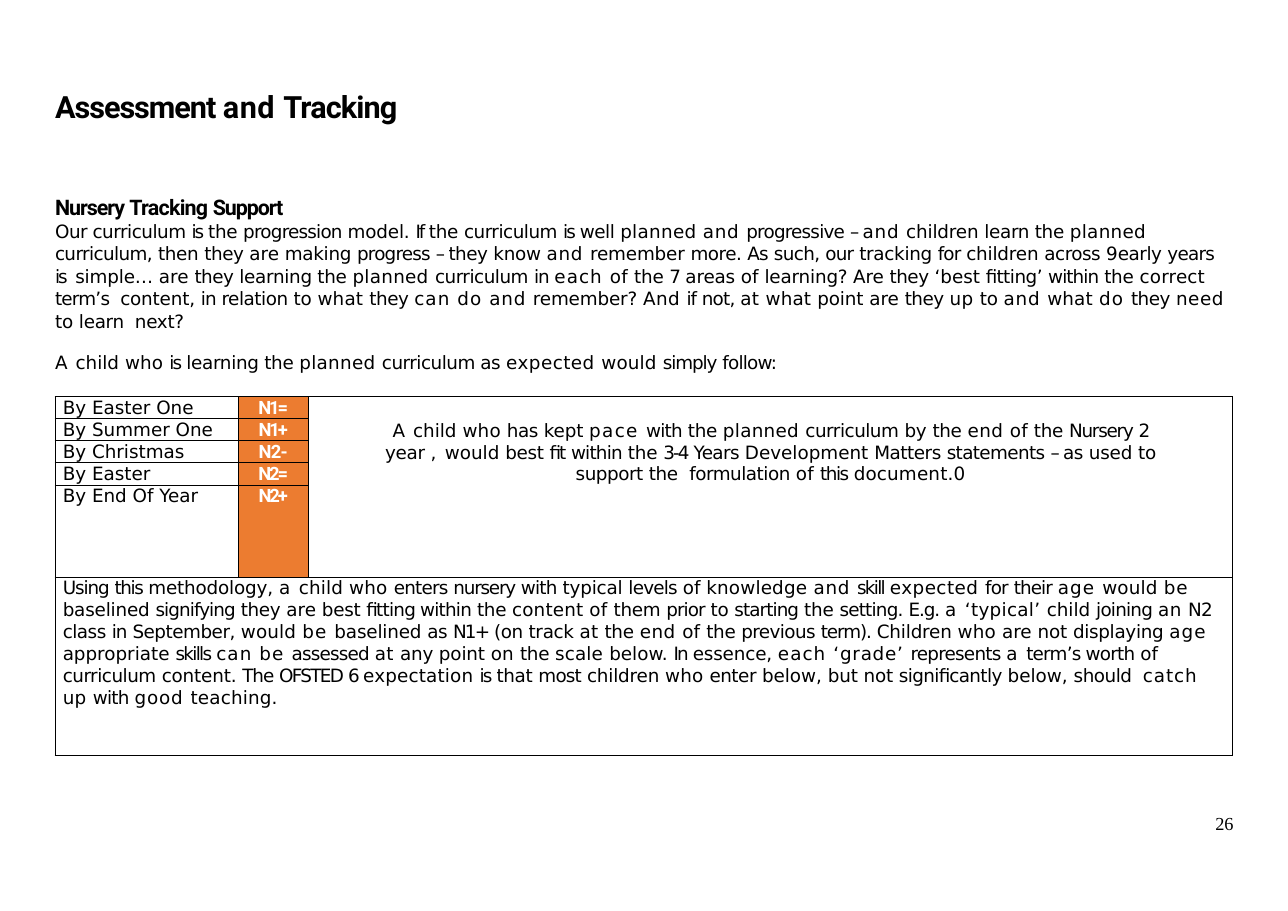
import pptx
import pptx.dml.color
import pptx.enum.text
import pptx.util
from lxml import etree
from pptx.oxml.ns import qn

WIDTH, HEIGHT = 11.69, 8.27
LEFT = 0.5
BLACK, WHITE, ORANGE = "000000", "FFFFFF", "EC7C30"
HEADING_FONT, BODY_FONT, NUMBER_FONT = "Roboto", "DejaVu Sans", "Times New Roman"
PP_ALIGN = pptx.enum.text.PP_ALIGN
Inches, Pt = pptx.util.Inches, pptx.util.Pt

# A number in brackets is the letter spacing, in points, of the words after it.
# Long paragraphs are tuples of pieces that are joined when written.
TITLE = "[-.7]Assessment [.3]and [-.6]Tracking"
SUBHEADING = "[-.7]Nursery [-.5]Tracking [-.7]Support"
INTRO = (
    "[-.3]Our curriculum [-1.3]is [-.2]the [-.5]progression [-.1]model. [-1.4]If [-.2]the ",
    "[-.3]curriculum [-1.2]is [-.3]well [.2]planned [.5]and [-.5]progressive [-1.6]– [.5]and ",
    "[-.1]children [-.2]learn the [.2]planned  ",
    "[-.4]curriculum, [-.2]then [-.3]they [0]are [-.2]making [-.5]progress [-1.6]– [-.3]they ",
    "[-.2]know [.5]and [-.1]remember [-.3]more. [-.5]As [-.4]such, [-.5]our [-.2]tracking ",
    "[-.6]for [-.1]children [-.3]across [-1.2]9[-.3]early [-.5]years ",
    "[-1.3]is  [-.1]simple… [0]are [-.3]they [-.2]learning the [.2]planned [-.3]curriculum ",
    "[-.7]in [.7]each [.1]of [-.1]the [-1]7 [-.1]areas [0]of [-.1]learning? Are [-.3]they ",
    "[0]‘best [-.3]fitting’ [-.6]within [-.1]the [.1]correct ",
    "[-.5]term’s  [-.1]content, [-.6]in [-.3]relation [-.1]to [.1]what [-.3]they [.7]can do ",
    "[.5]and [-.1]remember? [.3]And [-.7]if [-.5]not, [.2]at [.1]what [-.1]point [0]are ",
    "[-.3]they [.2]up [-.1]to [.5]and [.1]what [.7]do [-.3]they [.4]need ",
    "[-.1]to [-.2]learn  next?",
)
LEAD_IN = (
    "[.7]A [0]child [.1]who [-1.2]is [-.2]learning the [.2]planned [-.3]curriculum as ",
    "[.3]expected [.1]would [-.7]simply [-.5]follow:",
)
STAGES = [
    ("By Easter One", "[-1.4]N1="),
    ("By Summer One", "[-1.4]N1+"),
    ("By Christmas", "[-.5]N2-"),
    ("By Easter", "[-1.4]N2="),
    ("By End Of Year", "[-1.4]N2+"),
]
OUTCOME = (
    "[.7]A [0]child [.1]who [-.3]has [-.1]kept [.9]pace [-.5]with [-.2]the [.2]planned ",
    "[-.3]curriculum [-.1]by [-.2]the [.3]end [.1]of [-.2]the [-.8]Nursery [-1]2 ",
    "[-.2]year [-1.1],  [0]would [-.2]best [-.7]fit [-.5]within [-.1]the [-1.2]3-4 ",
    "[-.4]Years [0]Development [-.3]Matters [-.4]statements [-1.6]– [-.3]as [-.1]used to ",
    "[-.3]support [-.2]the  [-.3]formulation [.1]of [-.9]this [.1]document.0",
)
METHOD = (
    "[-.7]Using [-.9]this [-.1]methodology, [.9]a [.1]child who [-.5]enters [-.8]nursery ",
    "[-.5]with [-.1]typical [-.5]levels [0]of [.1]knowledge [.5]and [-1.1]skill [.3]expected ",
    "[-.5]for [-.6]their [.7]age [.1]would [.6]be  ",
    "[-.1]baselined [-.6]signifying [-.2]they [0]are [-.2]best [-.5]fitting within [-.2]the ",
    "[.1]content of [-.2]them [-.6]prior [-.2]to [-.6]starting [-.1]the [-.5]setting. ",
    "[-.7]E.g. [.9]a [.2]‘typical’ [0]child [-.5]joining [.3]an [-.6]N2  ",
    "[-.3]class [-.6]in [-.3]September, [.1]would [.7]be [-.1]baselined [-.3]as [-1.2]N1+ ",
    "[-.3](on [-.2]track [.1]at [-.1]the [.3]end [.1]of [-.2]the [-.4]previous [-.7]term). ",
    "[-.1]Children [.1]who [0]are [-.1]not [-.2]displaying [.7]age  ",
    "[0]appropriate [-1.1]skills [.7]can be [-.5]assessed [.2]at [-.1]any point [.1]on ",
    "[-.2]the [.1]scale [0]below. [-1.2]In [-.1]essence, [.7]each [.5]‘grade’ ",
    "[-.5]represents [.9]a [-.5]term’s worth [0]of  ",
    "[-.3]curriculum [-.1]content. [-.7]The [-1.1]OFSTED [-1.6]6 [.1]expectation [-1.2]is ",
    "[-.2]that [-.5]most [-.1]children [.1]who [-.3]enter [0]below, [-.1]but not ",
    "[-.4]significantly [0]below, [-.3]should  [.6]catch ",
    "[.2]up [-.5]with [.6]good [.1]teaching.",
)


def rgb(color):
    return pptx.dml.color.RGBColor.from_string(color)


def write(p, text, font=BODY_FONT, size=12, color=BLACK, bold=False,
          align=PP_ALIGN.LEFT, line=1.0, before=0):
    """Fill a paragraph from text with optional spacing marks."""
    p.alignment, p.line_spacing, p.space_before = align, line, Pt(before)
    p.font.name, p.font.size, p.font.bold = font, Pt(size), bold
    p.font.color.rgb = rgb(color)
    marked = "".join(text)
    if not marked.startswith("["):
        marked = "[0]" + marked
    for part in marked.split("[")[1:]:
        spacing, _, words = part.partition("]")
        r = p.add_run()
        r.text = words
        r.font._element.set("spc", str(round(float(spacing) * 100)))


def prepare_frame(tf):
    tf.word_wrap = True
    tf.auto_size = pptx.enum.text.MSO_AUTO_SIZE.NONE
    tf.vertical_anchor = pptx.enum.text.MSO_ANCHOR.TOP
    tf.margin_left = tf.margin_right = tf.margin_bottom = 0
    tf.margin_top = Inches(0.01)
    return tf


def add_title(slide, left, top, width, height):
    sp = slide.shapes.title
    sp.left, sp.top, sp.width, sp.height = map(Inches, (left, top, width, height))
    tf = prepare_frame(sp.text_frame)
    write(tf.paragraphs[0], TITLE, HEADING_FONT, 20, bold=True, before=1)


def add_intro(slide, left, top, width, height):
    sp = slide.shapes.add_textbox(*map(Inches, (left, top, width, height)))
    tf = prepare_frame(sp.text_frame)
    write(tf.paragraphs[0], SUBHEADING, HEADING_FONT, 14, bold=True, before=1.1)
    write(tf.add_paragraph(), INTRO, line=1.02, before=0.1)
    write(tf.add_paragraph(), LEAD_IN, before=12.3)


def style_cell(cell, fill=None, left=0, top=0.01, right=0):
    cell.margin_left, cell.margin_top = Inches(left), Inches(top)
    cell.margin_right, cell.margin_bottom = Inches(right), 0
    if fill:
        cell.fill.solid()
        cell.fill.fore_color.rgb = rgb(fill)
    else:
        cell.fill.background()
    tcPr = cell._tc.get_or_add_tcPr()
    for i, side in enumerate(("lnL", "lnR", "lnT", "lnB")):
        ln = etree.Element(qn("a:" + side), w=str(Pt(0.5)))
        solid = etree.SubElement(ln, qn("a:solidFill"))
        etree.SubElement(solid, qn("a:srgbClr"), val=BLACK)
        tcPr.insert(i, ln)


def add_tracking_table(slide, left, top, width, height):
    stage_width, grade_width = 1.66, 0.64
    stage_height, method_height = 0.2, 1.62
    last = len(STAGES)
    frame = slide.shapes.add_table(last + 1, 3, *map(Inches, (left, top, width, height)))
    table = frame.table
    table.first_row = table.horz_banding = False
    widths = (stage_width, grade_width, width - stage_width - grade_width)
    heights = [stage_height] * (last - 1)
    heights += [height - method_height - sum(heights), method_height]
    for column, w in zip(table.columns, widths):
        column.width = Inches(w)
    for row, h in zip(table.rows, heights):
        row.height = Inches(h)

    for i, (stage, grade) in enumerate(STAGES):
        style_cell(table.cell(i, 0), left=0.07)
        style_cell(table.cell(i, 1), ORANGE)
        style_cell(table.cell(i, 2), left=0.61, top=0.21, right=0.61)
        write(table.cell(i, 0).text_frame.paragraphs[0], stage, line=Pt(13.7))
        write(table.cell(i, 1).text_frame.paragraphs[0], grade, HEADING_FONT,
              color=WHITE, bold=True, align=PP_ALIGN.CENTER, line=Pt(13.7))
    for cell in table.rows[last].cells:
        style_cell(cell, left=0.07, top=0, right=0.1)

    outcome, method = table.cell(0, 2), table.cell(last, 0)
    outcome.merge(table.cell(last - 1, 2))
    method.merge(table.cell(last, 2))
    write(outcome.text_frame.paragraphs[0], OUTCOME, align=PP_ALIGN.CENTER, line=1.02)
    write(method.text_frame.paragraphs[0], METHOD, line=1.02, before=0.2)


def add_page_number(slide, left, top, width, height):
    sp = slide.shapes.add_textbox(*map(Inches, (left, top, width, height)))
    tf = prepare_frame(sp.text_frame)
    tf.margin_left, tf.margin_top = Inches(0.04), 0
    write(tf.paragraphs[0], "26", NUMBER_FONT, line=Pt(14.1))


def main():
    prs = pptx.Presentation()
    prs.slide_width, prs.slide_height = Inches(WIDTH), Inches(HEIGHT)
    slide = prs.slides.add_slide(prs.slide_layouts[5])
    add_title(slide, LEFT, 0.79, 3.42, 0.36)
    add_intro(slide, LEFT, 1.75, 10.64, 1.66)
    add_tracking_table(slide, LEFT, 3.6, WIDTH - 2 * LEFT, 3.26)
    add_page_number(slide, 10.99, 7.38, 0.26, 0.21)
    prs.save("out.pptx")


if __name__ == "__main__":
    main()
